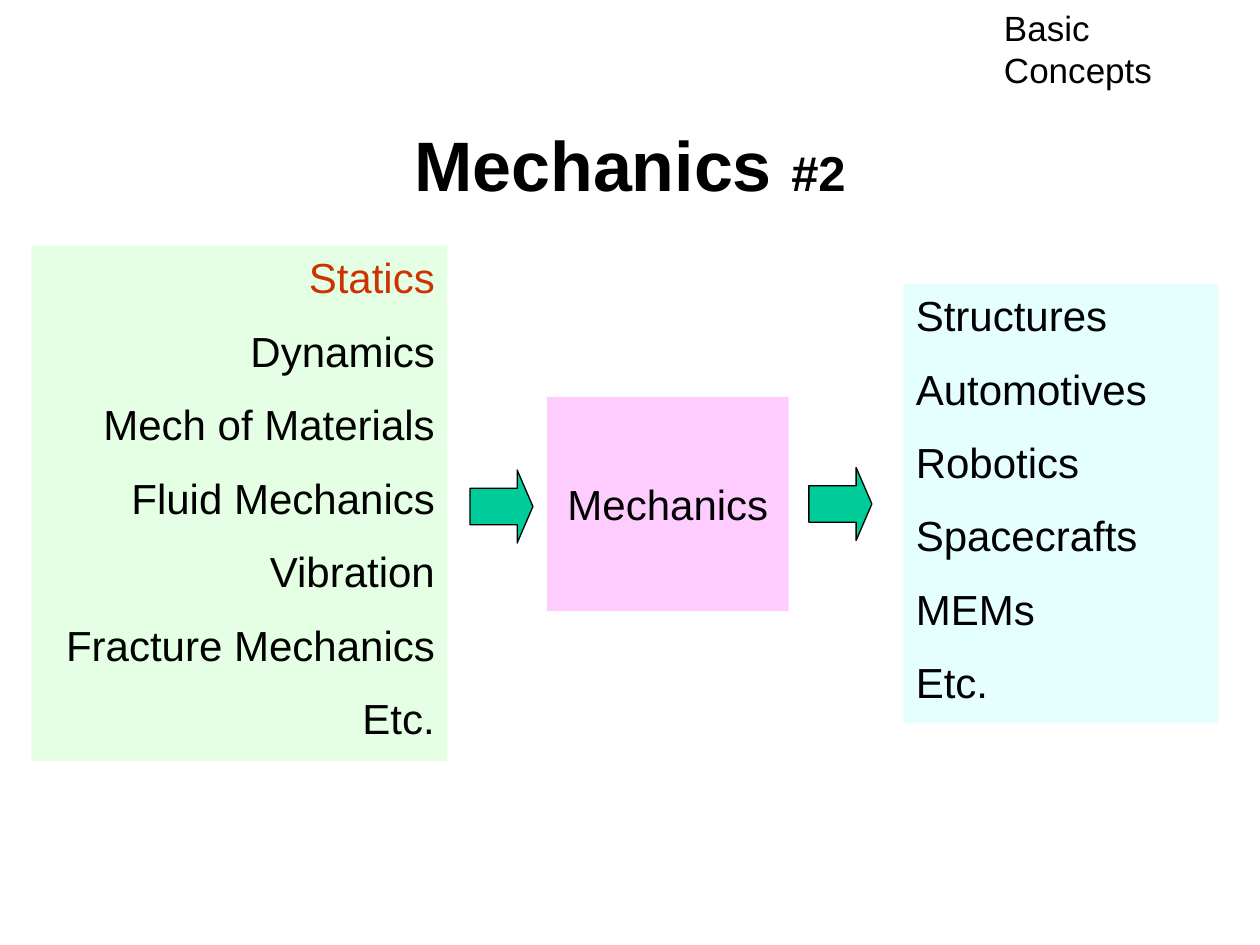
from dataclasses import dataclass

from lxml import etree
from pptx import Presentation
from pptx.dml.color import RGBColor
from pptx.enum.shapes import MSO_SHAPE
from pptx.enum.text import MSO_ANCHOR, PP_ALIGN
from pptx.oxml.ns import qn
from pptx.util import Inches, Pt

RECT, ARROW = MSO_SHAPE.RECTANGLE, MSO_SHAPE.RIGHT_ARROW
LEFT, CENTER, RIGHT = PP_ALIGN.LEFT, PP_ALIGN.CENTER, PP_ALIGN.RIGHT
TOP, MIDDLE = MSO_ANCHOR.TOP, MSO_ANCHOR.MIDDLE


@dataclass(frozen=True)
class Theme:
    font: str = "Arial"
    ink: str = "000000"
    accent: str = "CC3300"
    green: str = "CCFFCC"
    pink: str = "FFCCFF"
    cyan: str = "CCFFFF"
    arrow: str = "00CC99"
    title: float = 40
    title_number: float = 28
    body: float = 24
    header: float = 20
    item_gap: float = 13.15


@dataclass(frozen=True)
class Box:
    left: float
    top: float
    width: float
    height: float

    def lengths(self) -> list:
        return [Inches(v) for v in (self.left, self.top, self.width, self.height)]


@dataclass(frozen=True)
class Panel:
    box: Box
    fill: str
    items: tuple[str, ...]
    align: PP_ALIGN
    anchor: MSO_ANCHOR = TOP
    opacity: int = 100
    highlight: str = ""


THEME = Theme()
PANELS = (
    Panel(Box(4.34, 3.15, 1.92, 1.7), THEME.pink, ("Mechanics",), CENTER, MIDDLE),
    Panel(Box(0.25, 1.95, 3.3, 4.09), THEME.green,
          ("Statics", "Dynamics", "Mech of Materials", "Fluid Mechanics",
           "Vibration", "Fracture Mechanics", "Etc."),
          RIGHT, opacity=50, highlight="Statics"),
    Panel(Box(7.17, 2.25, 2.5, 3.49), THEME.cyan,
          ("Structures", "Automotives", "Robotics", "Spacecrafts", "MEMs", "Etc."),
          LEFT, opacity=50),
)
ARROWS = (Box(3.73, 3.73, 0.5, 0.58), Box(6.42, 3.71, 0.5, 0.58))


def style(p, size: float, color: str = THEME.ink, align: PP_ALIGN = LEFT) -> None:
    p.alignment = align
    p.font.name = THEME.font
    p.font.size = Pt(size)
    p.font.color.rgb = RGBColor.from_string(color)


def add_filled(slide, kind: MSO_SHAPE, box: Box, fill: str):
    sp = slide.shapes.add_shape(kind, *box.lengths())
    sp.shadow.inherit = False
    sp.fill.solid()
    sp.fill.fore_color.rgb = RGBColor.from_string(fill)
    return sp


def add_panel(slide, panel: Panel) -> None:
    sp = add_filled(slide, RECT, panel.box, panel.fill)
    sp.line.fill.background()
    if panel.opacity < 100:
        color = sp._element.spPr.find(qn("a:solidFill"))[0]
        etree.SubElement(color, qn("a:alpha"), val=str(panel.opacity * 1000))
    tf = sp.text_frame
    tf.word_wrap = True
    tf.vertical_anchor = panel.anchor
    for i, item in enumerate(panel.items):
        p = tf.add_paragraph() if i else tf.paragraphs[0]
        p.text = item
        color = THEME.accent if item == panel.highlight else THEME.ink
        style(p, THEME.body, color, panel.align)
        if i:
            p.space_before = Pt(THEME.item_gap)


def add_arrow(slide, box: Box) -> None:
    sp = add_filled(slide, ARROW, box, THEME.arrow)
    sp.adjustments[0], sp.adjustments[1] = 0.5, 0.25
    sp.line.color.rgb = RGBColor.from_string(THEME.ink)
    sp.line.width = Pt(0.75)


def add_title(slide) -> None:
    tf = slide.shapes.add_textbox(*Box(0.75, 0.67, 8.5, 1.25).lengths()).text_frame
    tf.word_wrap = True
    tf.vertical_anchor = MIDDLE
    p = tf.paragraphs[0]
    style(p, THEME.title, align=CENTER)
    p.font.bold = True
    p.add_run().text = "Mechanics "
    r = p.add_run()
    r.text = "#2"
    r.font.size = Pt(THEME.title_number)


def add_header(slide) -> None:
    tf = slide.shapes.add_textbox(*Box(7.87, 0, 2.13, 0.43).lengths()).text_frame
    tf.word_wrap = False
    p = tf.paragraphs[0]
    p.text = "Basic Concepts"
    style(p, THEME.header)


def main() -> None:
    prs = Presentation()
    prs.slide_width, prs.slide_height = Inches(10), Inches(7.5)
    slide = prs.slides.add_slide(prs.slide_layouts[6])
    add_title(slide)
    for panel in PANELS:
        add_panel(slide, panel)
    for box in ARROWS:
        add_arrow(slide, box)
    add_header(slide)
    prs.save("out.pptx")


if __name__ == "__main__":
    main()
